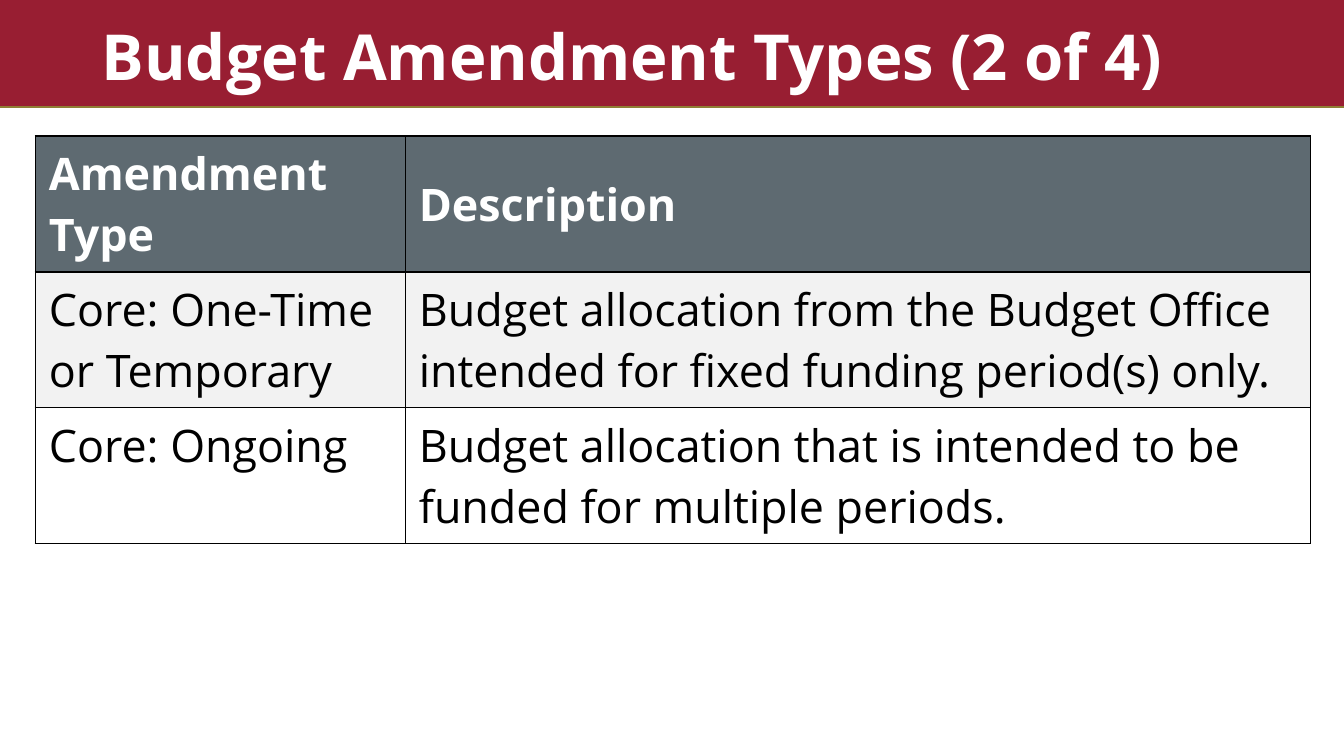
from lxml import etree
from pptx import Presentation
from pptx.dml.color import RGBColor
from pptx.enum import shapes, text
from pptx.oxml import ns
from pptx.util import Pt

COLORS = {
    "crimson": "981E32", "gold": "8F7E35", "slate": "5E6A71",
    "light": "F2F2F2", "white": "FFFFFF", "black": "000000",
}


def color(name):
    return RGBColor.from_string(COLORS[name])


def write(frame, content, size=24, bold=False, ink="black", line_spacing=None):
    paragraph = frame.paragraphs[0]
    paragraph.alignment = text.PP_ALIGN.LEFT
    paragraph.line_spacing = line_spacing
    run = paragraph.add_run()
    run.text = content
    run.font.name = "Open Sans"
    run.font.size = Pt(size)
    run.font.bold = bold
    run.font.color.rgb = color(ink)


presentation = Presentation()
presentation.slide_width = Pt(720)
presentation.slide_height = Pt(405)
slide = presentation.slides.add_slide(presentation.slide_layouts[5])
title = slide.shapes.title

# Header band with a rule below it
band = slide.shapes.add_shape(shapes.MSO_SHAPE.RECTANGLE, 0, 0, Pt(720), Pt(57.5))
band.shadow.inherit = False
band.fill.solid()
band.fill.fore_color.rgb = color("crimson")
band.line.fill.background()

rule = slide.shapes.add_connector(
    shapes.MSO_CONNECTOR.STRAIGHT, 0, Pt(57.5), Pt(720), Pt(57.5))
rule.line.color.rgb = color("gold")
rule.line.width = Pt(1)
etree.SubElement(rule.element.spPr, ns.qn("a:effectLst"))

# Title, in front of the band
rule.element.addnext(title.element)
title.left, title.top, title.width, title.height = Pt(18.5), Pt(9), Pt(720), Pt(45)
frame = title.text_frame
frame.margin_left = frame.margin_right = Pt(36)
frame.margin_top = frame.margin_bottom = Pt(3.6)
frame.vertical_anchor = text.MSO_ANCHOR.BOTTOM
frame.word_wrap = True
frame.auto_size = text.MSO_AUTO_SIZE.SHAPE_TO_FIT_TEXT
write(frame, "Budget Amendment Types (2 of 4)", size=34, bold=True,
      ink="white", line_spacing=0.9)

# Table of amendment types
rows = [
    ("Amendment Type", "Description"),
    ("Core: One-Time or Temporary",
     "Budget allocation from the Budget Office intended for fixed funding period(s) only."),
    ("Core: Ongoing",
     "Budget allocation that is intended to be funded for multiple periods."),
]
row_fills = ["slate", "light", "white"]
row_height = Pt(72.8)
table = slide.shapes.add_table(
    len(rows), 2, Pt(19), Pt(72.8), Pt(683), row_height * len(rows)).table
table.columns[0].width = Pt(198.2)
table.columns[1].width = Pt(484.8)

for row_index, row in enumerate(rows):
    table.rows[row_index].height = row_height
    header = row_index == 0
    for column_index, content in enumerate(row):
        cell = table.cell(row_index, column_index)
        cell.vertical_anchor = text.MSO_ANCHOR.MIDDLE if header else text.MSO_ANCHOR.TOP
        write(cell.text_frame, content, bold=header, ink="white" if header else "black")

        # Borders come before the fill in the cell properties
        properties = cell._tc.get_or_add_tcPr()
        for side in ("lnL", "lnR", "lnT", "lnB"):
            border = etree.SubElement(properties, ns.qn(f"a:{side}"), w=str(Pt(1)))
            fill = etree.SubElement(border, ns.qn("a:solidFill"))
            etree.SubElement(fill, ns.qn("a:srgbClr"), val=COLORS["black"])
        cell.fill.solid()
        cell.fill.fore_color.rgb = color(row_fills[row_index])

presentation.save("out.pptx")
